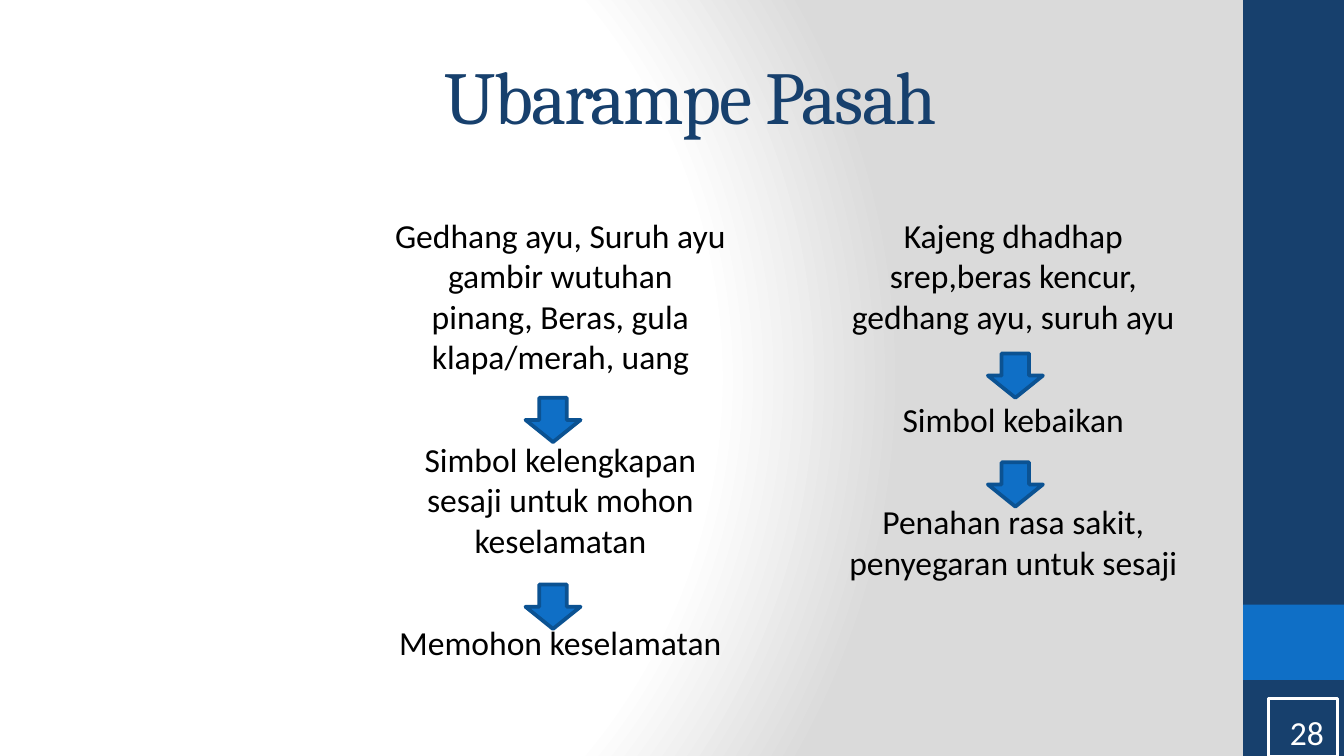
"""Build the slide "Ubarampe Pasah": two columns of offerings and their meanings."""
from lxml import etree
from pptx import Presentation
from pptx import util as u
from pptx.dml.color import RGBColor
from pptx.enum import shapes, text
from pptx.oxml import parse_xml
from pptx.oxml.ns import nsdecls, qn

NAVY = RGBColor(0x17, 0x40, 0x6D)
BLUE = RGBColor(0x0F, 0x6F, 0xC6)
EDGE = RGBColor(0x0B, 0x52, 0x92)
BLACK = RGBColor(0, 0, 0)
WHITE = RGBColor(0xFF, 0xFF, 0xFF)

BACKGROUND = f"""<p:bg {nsdecls('p', 'a')}><p:bgPr><a:gradFill rotWithShape="1"><a:gsLst>
<a:gs pos="0"><a:srgbClr val="FFFFFF"/></a:gs>
<a:gs pos="75000"><a:srgbClr val="FFFFFF"/></a:gs>
<a:gs pos="100000"><a:srgbClr val="DADADA"/></a:gs></a:gsLst>
<a:path path="circle"><a:fillToRect l="20000" t="50000" r="100000" b="50000"/></a:path>
</a:gradFill><a:effectLst/></p:bgPr></p:bg>"""

COLUMNS = [
    (2.71, ["Gedhang ayu, Suruh ayu gambir wutuhan pinang, Beras, gula klapa/merah, uang",
            "Simbol kelengkapan sesaji untuk mohon keselamatan",
            "Memohon keselamatan"]),
    (6.08, ["Kajeng dhadhap srep,beras kencur, gedhang ayu, suruh ayu",
            "Simbol kebaikan",
            "Penahan rasa sakit, penyegaran untuk sesaji"]),
]
ARROWS = [(3.91, 2.96), (3.91, 4.35), (7.35, 2.63), (7.35, 3.44)]


def add_figure(kind, left, top, width, height, fill=None, line=None, weight=0):
    figure = page.shapes.add_shape(kind, *map(u.Inches, (left, top, width, height)))
    figure.shadow.inherit = False
    if fill is None:
        figure.fill.background()
    else:
        figure.fill.solid()
        figure.fill.fore_color.rgb = fill
    if line is None:
        figure.line.fill.background()
    else:
        figure.line.color.rgb = line
        figure.line.width = u.Pt(weight)
    return figure


def prepare(box, left, top, width, height, anchor):
    box.left, box.top, box.width, box.height = map(u.Inches, (left, top, width, height))
    frame = box.text_frame
    frame.margin_left = frame.margin_right = u.Inches(0.1)
    frame.margin_top = frame.margin_bottom = u.Inches(0.1)
    frame.word_wrap = True
    frame.auto_size = text.MSO_AUTO_SIZE.NONE
    frame.vertical_anchor = anchor
    return frame


deck = Presentation()
deck.slide_width = u.Inches(10)
deck.slide_height = deck.slide_width * 9 // 16
page = deck.slides.add_slide(deck.slide_layouts[3])
page.element.cSld.insert(0, parse_xml(BACKGROUND))

side = add_figure(shapes.MSO_SHAPE.RECTANGLE, 9.25, 0, 0.75, 5.62, NAVY)
side.height = deck.slide_height
add_figure(shapes.MSO_SHAPE.RECTANGLE, 9.25, 4.5, 0.75, 0.56, BLUE)

frame = prepare(page.shapes.title, 3.21, 0.44, 5.77, 0.7, text.MSO_ANCHOR.BOTTOM)
frame.text = "Ubarampe Pasah"
para = frame.paragraphs[0]
para.alignment = text.PP_ALIGN.LEFT
span = para.runs[0]
span.font.name, span.font.size = "Cambria", u.Pt(40)
span.font.color.rgb = NAVY
span.font._element.set("spc", "-100")

for index, (left, steps) in enumerate(COLUMNS, start=1):
    frame = prepare(page.placeholders[index], left, 1.5, 2.8, 3.69, text.MSO_ANCHOR.TOP)
    frame.text = "\n".join(steps)
    for number, para in enumerate(frame.paragraphs):
        properties = para._p.get_or_add_pPr()
        properties.set("marL", str(u.Inches(0.12)))
        properties.set("indent", "0")
        etree.SubElement(properties, qn("a:buNone"))
        para.alignment = text.PP_ALIGN.CENTER
        para.space_before = u.Pt(33.5 if number else 0)
        span = para.runs[0]
        span.font.name, span.font.size = "Calibri", u.Pt(18)
        span.font.color.rgb = BLACK

badge = add_figure(shapes.MSO_SHAPE.RECTANGLE, 9.44, 5.2, 0.51, 0.43, line=WHITE, weight=1.5)
frame = prepare(badge, 9.44, 5.2, 0.51, 0.43, text.MSO_ANCHOR.TOP)
frame.text = "28"
para = frame.paragraphs[0]
para.alignment = text.PP_ALIGN.RIGHT
span = para.runs[0]
span.font.name, span.font.size = "Calibri", u.Pt(18)
span.font.color.rgb = WHITE

for left, top in ARROWS:
    add_figure(shapes.MSO_SHAPE.DOWN_ARROW, left, top, 0.41, 0.33, BLUE, EDGE, 2)

deck.save("out.pptx")
